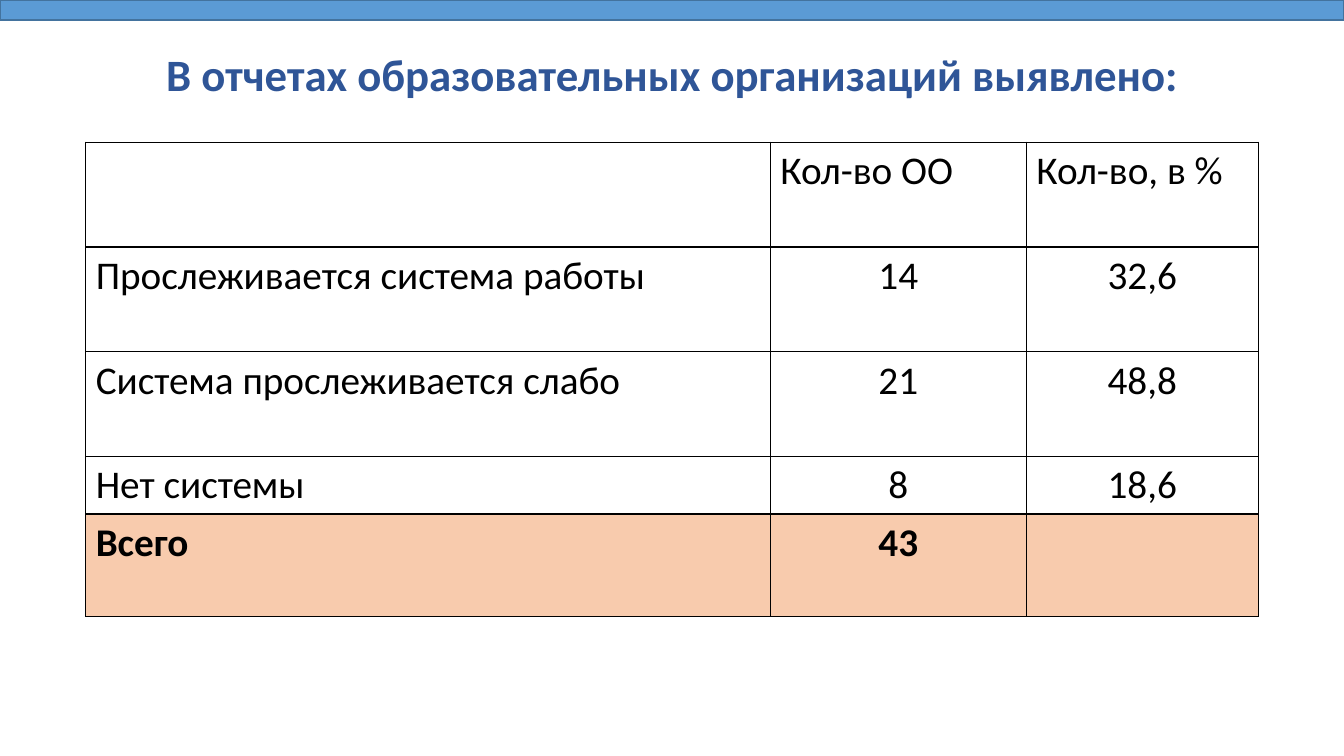
from dataclasses import dataclass

from lxml.etree import SubElement
from pptx import Presentation
from pptx.dml.color import RGBColor
from pptx.enum.shapes import MSO_SHAPE
from pptx.enum.text import MSO_ANCHOR, PP_ALIGN
from pptx.oxml.ns import qn
from pptx.util import Inches, Pt


@dataclass(frozen=True)
class Theme:
    font: str = "Calibri"
    title_size: int = 32
    table_size: int = 28
    line_width: int = 1
    title: str = "2F5597"
    text: str = "000000"
    border: str = "000000"
    bar: str = "5B9BD5"
    bar_line: str = "43739E"
    total_fill: str = "F8CBAD"


@dataclass(frozen=True)
class Row:
    label: str
    count: str
    percent: str
    height: float
    header: bool = False
    total: bool = False


THEME = Theme()
SLIDE_W, SLIDE_H = 13.33, 7.5
COL_WIDTHS = (6.79, 2.54, 2.3)
ROWS = (
    Row("", "Кол-во ОО", "Кол-во, в %", 1.04, header=True),
    Row("Прослеживается система работы", "14", "32,6", 1.04),
    Row("Система прослеживается слабо", "21", "48,8", 1.04),
    Row("Нет системы", "8", "18,6", 0.57),
    Row("Всего", "43", "", 1.02, total=True),
)


def style_font(p, size: int, color: str, bold: bool) -> None:
    p.font.name = THEME.font
    p.font.size = Pt(size)
    p.font.bold = bold
    p.font.color.rgb = RGBColor.from_string(color)


def add_title(slide, text: str) -> None:
    box = slide.shapes.add_textbox(Inches(0.92), Inches(0.27), Inches(11.5), Inches(0.98))
    tf = box.text_frame
    tf.word_wrap = True
    tf.vertical_anchor = MSO_ANCHOR.MIDDLE
    p = tf.paragraphs[0]
    p.text = text
    p.alignment = PP_ALIGN.CENTER
    p.line_spacing = 0.9
    style_font(p, THEME.title_size, THEME.title, True)


def add_borders(cell) -> None:
    tc_pr = cell._tc.get_or_add_tcPr()
    for side in ("a:lnL", "a:lnR", "a:lnT", "a:lnB"):
        ln = SubElement(tc_pr, qn(side), w=str(Pt(THEME.line_width)))
        fill = SubElement(ln, qn("a:solidFill"))
        SubElement(fill, qn("a:srgbClr"), val=THEME.border)


def fill_cell(cell, text: str, row: Row, centred: bool) -> None:
    add_borders(cell)
    if row.total:
        cell.fill.solid()
        cell.fill.fore_color.rgb = RGBColor.from_string(THEME.total_fill)
    else:
        cell.fill.background()
    p = cell.text_frame.paragraphs[0]
    p.text = text
    p.alignment = PP_ALIGN.CENTER if centred else PP_ALIGN.LEFT
    style_font(p, THEME.table_size, THEME.text, row.total)


def add_results_table(slide) -> None:
    table = slide.shapes.add_table(
        len(ROWS), len(COL_WIDTHS), Inches(0.85), Inches(1.41),
        Inches(sum(COL_WIDTHS)), Inches(sum(row.height for row in ROWS)),
    ).table
    table.first_row = False
    table.horz_banding = False
    for column, width in zip(table.columns, COL_WIDTHS):
        column.width = Inches(width)
    for i, row in enumerate(ROWS):
        table.rows[i].height = Inches(row.height)
        for j, text in enumerate((row.label, row.count, row.percent)):
            fill_cell(table.cell(i, j), text, row, centred=j > 0 and not row.header)


def add_top_bar(slide) -> None:
    sp = slide.shapes.add_shape(MSO_SHAPE.RECTANGLE, 0, 0, Inches(SLIDE_W), Inches(0.2))
    sp.shadow.inherit = False
    sp.fill.solid()
    sp.fill.fore_color.rgb = RGBColor.from_string(THEME.bar)
    sp.line.color.rgb = RGBColor.from_string(THEME.bar_line)
    sp.line.width = Pt(THEME.line_width)


def main() -> None:
    prs = Presentation()
    prs.slide_width, prs.slide_height = Inches(SLIDE_W), Inches(SLIDE_H)
    slide = prs.slides.add_slide(prs.slide_layouts[6])

    # Heading
    add_title(slide, "В отчетах образовательных организаций выявлено:")
    # Results by category
    add_results_table(slide)
    # Decorative bar along the top edge
    add_top_bar(slide)

    prs.save("out.pptx")


if __name__ == "__main__":
    main()
